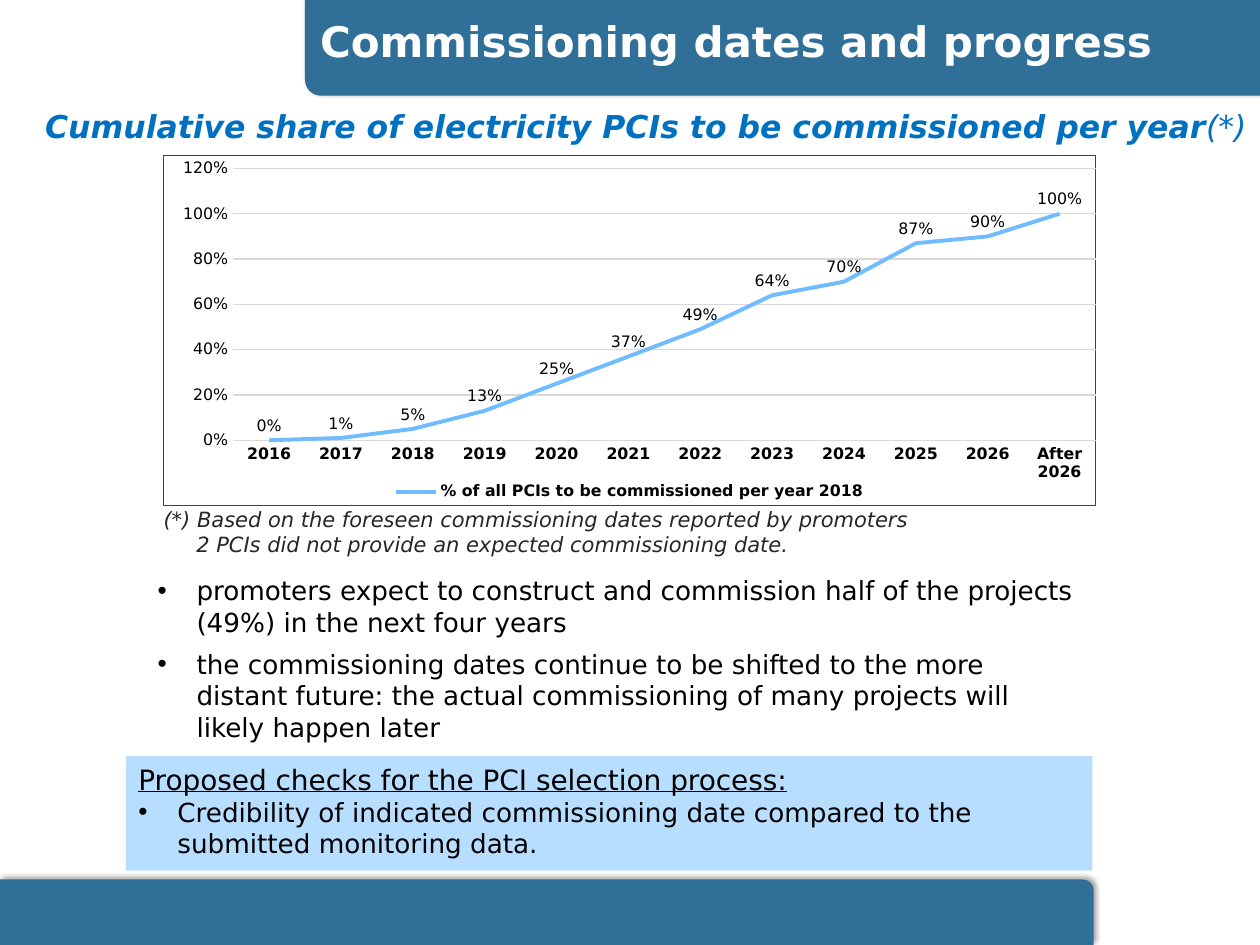
from lxml import etree
from pptx import Presentation
from pptx.chart.data import CategoryChartData
from pptx.dml.color import RGBColor
from pptx.enum.chart import XL_CHART_TYPE, XL_LABEL_POSITION, XL_LEGEND_POSITION, XL_TICK_MARK
from pptx.enum.shapes import MSO_SHAPE
from pptx.enum.text import MSO_ANCHOR, MSO_AUTO_SIZE, PP_ALIGN
from pptx.oxml import parse_xml
from pptx.oxml.ns import nsdecls, qn
from pptx.util import Inches, Pt

LINE_CHART = XL_CHART_TYPE.LINE
LABEL_ABOVE = XL_LABEL_POSITION.ABOVE
LEGEND_BOTTOM = XL_LEGEND_POSITION.BOTTOM
NO_TICK = XL_TICK_MARK.NONE
RECTANGLE = MSO_SHAPE.RECTANGLE
ROUNDED = MSO_SHAPE.ROUND_1_RECTANGLE
TOP = MSO_ANCHOR.TOP
LEFT = PP_ALIGN.LEFT
FIXED = MSO_AUTO_SIZE.NONE

WIDTH, HEIGHT = 10, 7.5
FONT = "DejaVu Sans"
BLACK, BAR, GRID = "000000", "307098", "D9D9D9"
HANG = 0.31

TITLE = "Commissioning dates and progress"
SUBTITLE = [("Cumulative share of electricity PCIs to be commissioned per year", True), ("(*)", False)]
SERIES = "% of all PCIs to be commissioned per year 2018"
CATEGORIES = [str(year) for year in range(2016, 2027)] + ["After 2026"]
SHARES = [0, 0.01, 0.05, 0.13, 0.25, 0.37, 0.49, 0.64, 0.7, 0.87, 0.9, 1]
FOOTNOTES = [
    ("(*) Based on the foreseen commissioning dates reported by promoters", 0.2),
    ("2 PCIs did not provide an expected commissioning date.", 0.46),
]
FINDINGS = [
    "promoters expect to construct and commission half of the projects (49%) in the next four years",
    "the commissioning dates continue to be shifted to the more distant future: "
    "the actual commissioning of many projects will likely happen later",
]
CHECK_HEADING = "Proposed checks for the PCI selection process:"
CHECK = "Credibility of indicated commissioning date compared to the submitted monitoring data."
PLOT_AREA = {"x": 0.075, "y": 0.037, "w": 0.925, "h": 0.776}


def color(value):
    return RGBColor.from_string(value)


def place(shape, left, top, width, height):
    shape.left, shape.top = Inches(left), Inches(top)
    shape.width, shape.height = Inches(width), Inches(height)


def style(font, size, value=BLACK, bold=False, italic=False):
    font.name, font.size = FONT, Pt(size)
    font.bold, font.italic = bold, italic
    font.color.rgb = color(value)


def add_span(para, text, size, value=BLACK, bold=False, italic=False):
    span = para.add_run()
    span.text = text
    style(span.font, size, value, bold, italic)
    return span


def prepare(frame, wrap=True):
    frame.word_wrap = wrap
    frame.auto_size = FIXED
    frame.vertical_anchor = TOP
    return frame


def add_para(frame, first=False):
    para = frame.paragraphs[0] if first else frame.add_paragraph()
    para.alignment = LEFT
    para.space_before = Pt(0)
    return para


def indent(para, margin, hang=0, bullet=None):
    properties = para._p.get_or_add_pPr()
    properties.set("marL", str(Inches(margin)))
    properties.set("indent", str(Inches(-hang)))
    if bullet:
        etree.SubElement(properties, qn("a:buFont"), typeface="Arial")
        etree.SubElement(properties, qn("a:buChar"), char=bullet)


def add_box(slide, preset, area, fill):
    box = slide.shapes.add_shape(preset, *map(Inches, area))
    box.shadow.inherit = False
    box.fill.solid()
    box.fill.fore_color.rgb = color(fill)
    box.line.fill.background()
    return box


def add_bar(slide, area, rotation=0):
    bar = add_box(slide, ROUNDED, area, BAR)
    bar.rotation = rotation
    effects = bar._element.spPr.find(qn("a:effectLst"))
    effects.append(parse_xml(
        f'<a:outerShdw {nsdecls("a")} blurRad="{Pt(3.1)}" dist="{Pt(1.8)}" dir="{306 * 60000}" '
        'rotWithShape="0"><a:srgbClr val="000000"><a:alpha val="35000"/></a:srgbClr></a:outerShdw>'))
    return bar


def add_line_chart(slide):
    data = CategoryChartData(number_format="0%")
    data.categories = CATEGORIES
    data.add_series(SERIES, SHARES)
    area = map(Inches, (1.29, 1.23, 7.41, 2.79))
    chart = slide.shapes.add_chart(LINE_CHART, *area, data).chart
    chart.has_title = False
    style(chart.font, 10)
    chart.has_legend = True
    chart.legend.position = LEGEND_BOTTOM
    chart.legend.include_in_layout = False
    style(chart.legend.font, 9, bold=True)

    for axis, bold in ((chart.category_axis, True), (chart.value_axis, False)):
        axis.major_tick_mark = axis.minor_tick_mark = NO_TICK
        style(axis.tick_labels.font, 9, bold=bold)
    values = chart.value_axis
    values.minimum_scale, values.maximum_scale, values.major_unit = 0, 1.2, 0.2
    values.tick_labels.number_format = "0%"
    values.tick_labels.number_format_is_linked = False
    values.format.line.fill.background()
    values.has_major_gridlines = True
    for line in (values.major_gridlines.format.line, chart.category_axis.format.line):
        line.color.rgb = color(GRID)
        line.width = Pt(0.75)

    plot = chart.plots[0]
    plot.vary_by_categories = False
    series = plot.series[0]
    series.smooth = False
    series.format.line.color.rgb = color("71BCFF")
    series.format.line.width = Pt(2.25)
    labels = series.data_labels
    labels.show_value = True
    labels.position = LABEL_ABOVE
    labels.number_format = "0%"
    labels.number_format_is_linked = False
    style(labels.font, 9)

    body = chart._chartSpace.find(qn("c:chart"))
    body.addnext(parse_xml(
        f'<c:spPr {nsdecls("c", "a")}><a:noFill/><a:ln w="{Pt(0.75)}"><a:solidFill>'
        '<a:srgbClr val="00529B"/></a:solidFill></a:ln></c:spPr>'))
    plot_area = body.find(qn("c:plotArea"))
    for layout in plot_area.findall(qn("c:layout")):
        plot_area.remove(layout)
    layout = etree.Element(qn("c:layout"))
    manual = etree.SubElement(layout, qn("c:manualLayout"))
    settings = {"layoutTarget": "inner", "xMode": "edge", "yMode": "edge", **PLOT_AREA}
    for name, value in settings.items():
        etree.SubElement(manual, qn(f"c:{name}"), val=str(value))
    plot_area.insert(0, layout)


def main():
    deck = Presentation()
    deck.slide_width, deck.slide_height = Inches(WIDTH), Inches(HEIGHT)
    slide = deck.slides.add_slide(deck.slide_layouts[1])
    title, body = slide.placeholders

    bars = [add_bar(slide, (0, 6.98, 8.68, 0.52)), add_bar(slide, (2.42, 0, 7.58, 0.76), 180)]
    for bar in bars:
        title._element.addprevious(bar._element)

    place(title, 2.44, 0.12, 7.56, 0.67)
    para = add_para(prepare(title.text_frame), first=True)
    para.line_spacing = 0.9
    add_span(para, TITLE, 24, "FFFFFF", bold=True)

    place(body, 0.26, 4.51, 8.44, 1.45)
    frame = prepare(body.text_frame)
    for number, text in enumerate(FINDINGS):
        para = add_para(frame, number == 0)
        para.space_after = Pt(6)
        indent(para, 1.2, HANG, "•")
        add_span(para, text, 15)

    add_line_chart(slide)

    subtitle = slide.shapes.add_textbox(*map(Inches, (0.26, 0.8, 9.93, 0.4)))
    para = add_para(prepare(subtitle.text_frame, wrap=False), first=True)
    for text, bold in SUBTITLE:
        add_span(para, text, 18, "0070C0", bold, italic=True)

    checks = add_box(slide, RECTANGLE, (1, 6, 7.67, 0.91), "B8DEFF")
    frame = prepare(checks.text_frame)
    add_span(add_para(frame, first=True), CHECK_HEADING, 16).font.underline = True
    para = add_para(frame)
    indent(para, HANG, HANG, "•")
    add_span(para, CHECK, 15)

    footnote = slide.shapes.add_textbox(*map(Inches, (1, 3.97, 8.44, 0.5)))
    frame = prepare(footnote.text_frame)
    for number, (text, margin) in enumerate(FOOTNOTES):
        para = add_para(frame, number == 0)
        indent(para, margin)
        add_span(para, text, 12, "262626", italic=True)

    deck.save("out.pptx")


if __name__ == "__main__":
    main()
